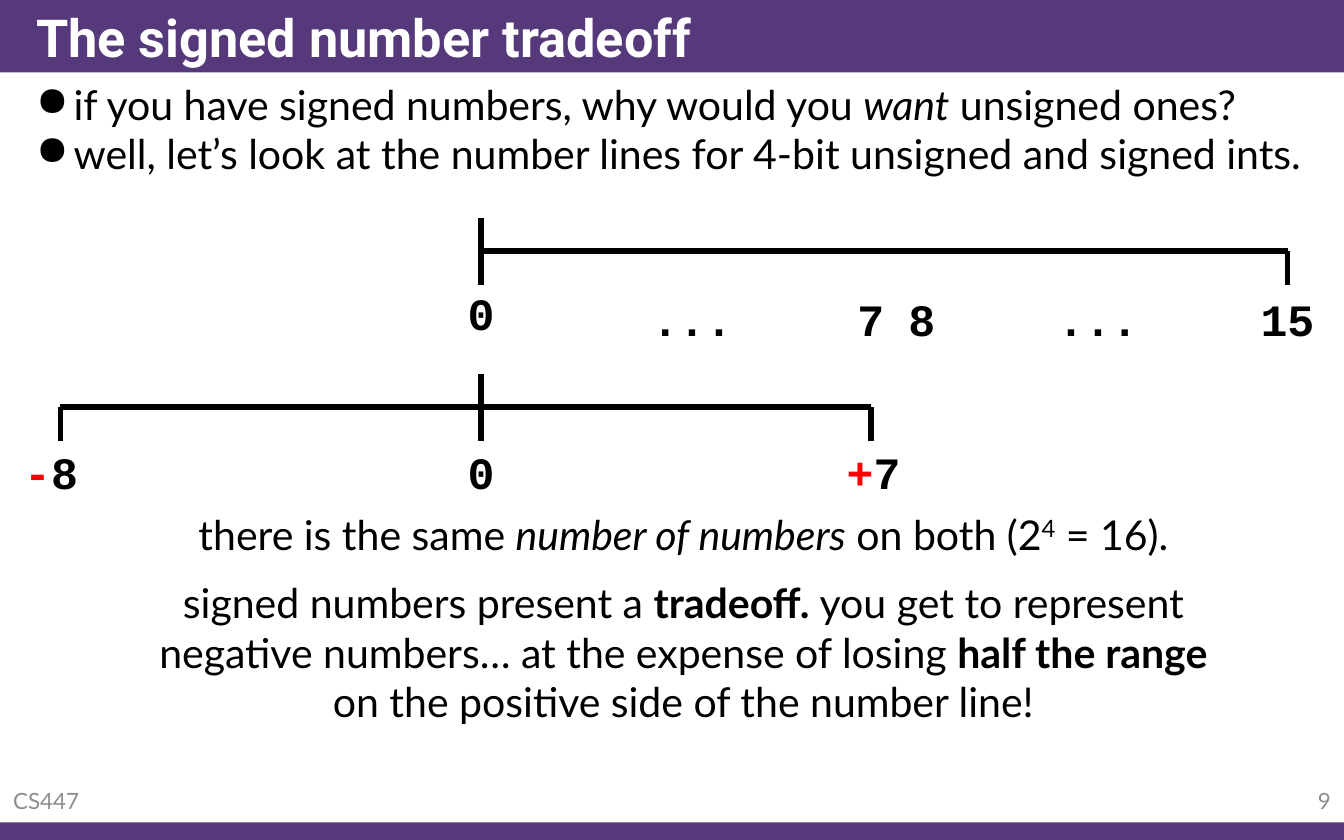
from dataclasses import dataclass

from lxml import etree
from pptx import Presentation
from pptx import util as u
from pptx.dml import color
from pptx.enum import shapes, text
from pptx.oxml import ns


@dataclass(frozen=True)
class Theme:
    purple: str = "56397B"
    black: str = "000000"
    white: str = "FFFFFF"
    gray: str = "8C8C8C"
    red: str = "FF0000"
    heading_font: str = "Roboto"
    body_font: str = "Lato"
    number_font: str = "Courier New"
    title_size: int = 28
    body_size: int = 22
    number_size: int = 24
    footer_size: int = 12
    line_width: int = 3


THEME = Theme()
TITLE = dict(name=THEME.heading_font, size=THEME.title_size, color=THEME.white, bold=True)
BODY = dict(name=THEME.body_font, size=THEME.body_size, color=THEME.black)
NUMBER = dict(name=THEME.number_font, size=THEME.number_size, color=THEME.black, bold=True)
FOOTER = dict(name=THEME.body_font, size=THEME.footer_size, color=THEME.gray)
BOLD = dict(bold=True)
ITALIC = dict(italic=True)
SUPERSCRIPT = dict(baseline=30000)
SIGN = dict(color=THEME.red)
CENTER = text.PP_ALIGN.CENTER
MIDDLE = text.MSO_ANCHOR.MIDDLE


def add_run(paragraph, words, style):
    run = paragraph.add_run()
    run.text = words
    for key, value in style.items():
        if key == "color":
            run.font.color.rgb = color.RGBColor.from_string(value)
        elif key == "size":
            run.font.size = u.Pt(value)
        elif key == "baseline":
            run.font._element.set("baseline", str(value))
        else:
            setattr(run.font, key, value)


def add_text(slide, box, paragraphs, style, align=text.PP_ALIGN.LEFT, **frame_format):
    shape = slide.shapes.add_textbox(*map(u.Inches, box))
    frame = shape.text_frame
    for key, value in {"word_wrap": True, **frame_format}.items():
        setattr(frame, key, value)
    for index, runs in enumerate(paragraphs):
        paragraph = frame.add_paragraph() if index else frame.paragraphs[0]
        paragraph.alignment = align
        for words, changes in runs:
            add_run(paragraph, words, {**style, **changes})
    return shape


def add_bar(slide, box):
    shape = slide.shapes.add_shape(shapes.MSO_SHAPE.RECTANGLE, *map(u.Inches, box))
    shape.shadow.inherit = False
    shape.fill.solid()
    shape.fill.fore_color.rgb = color.RGBColor.from_string(THEME.purple)
    shape.line.fill.background()


def add_line(slide, *ends):
    line = slide.shapes.add_connector(shapes.MSO_CONNECTOR.STRAIGHT, *map(u.Inches, ends))
    line.line.color.rgb = color.RGBColor.from_string(THEME.black)
    line.line.width = u.Pt(THEME.line_width)
    etree.SubElement(line._element.spPr, ns.qn("a:effectLst"))


def add_header(slide, box, title):
    left, top, width, height = box
    add_bar(slide, box)
    add_text(slide, (left + 0.17, top, width - 0.17, height), [[(title, {})]], TITLE,
             vertical_anchor=MIDDLE)


def add_bullets(slide, box, paragraphs):
    shape = add_text(slide, box, paragraphs, BODY)
    for paragraph in shape.text_frame.paragraphs:
        properties = paragraph._p.get_or_add_pPr()
        properties.set("marL", str(u.Inches(0.28)))
        properties.set("indent", str(-u.Inches(0.28)))
        etree.SubElement(properties, ns.qn("a:buChar")).set("char", "●")


def add_number_line(slide, box, zero, end_ticks, labels):
    left, top, width, height = box
    axis = top + height / 2
    add_line(slide, left, axis, left + width, axis)
    add_line(slide, zero, top, zero, top + height)
    for tick in end_ticks:
        add_line(slide, tick, axis, tick, top + height)
    for center, label_top, runs in labels:
        add_text(slide, (center - 0.5, label_top, 1, 0.5), [runs], NUMBER, CENTER)


def add_footer(slide, box, course, page):
    left, top, width, height = box
    add_text(slide, (left, top, 1.33, 0.33), [[(course, {})]], FOOTER, vertical_anchor=MIDDLE)
    add_text(slide, (left + width - 0.75, top, 0.75, 0.33), [[(page, {})]], FOOTER,
             text.PP_ALIGN.RIGHT, vertical_anchor=MIDDLE)
    add_bar(slide, (left, top + 0.33, width, height - 0.33))


def main():
    presentation = Presentation()
    presentation.slide_width = u.Inches(10)
    presentation.slide_height = u.Inches(6.25)
    slide = presentation.slides.add_slide(presentation.slide_layouts[6])

    add_header(slide, (0, 0, 10, 0.54), "The signed number tradeoff")
    add_bullets(slide, (0.17, 0.54, 9.83, 1), [
        [("if you have signed numbers, why would you ", {}), ("want", ITALIC),
         (" unsigned ones?", {})],
        [("well, let’s look at the number lines for 4-bit unsigned and signed ints.", {})],
    ])

    zero = 3.58
    unsigned_top, signed_top = 2.12, 3.26
    add_number_line(slide, (zero, 1.62, 6, 0.5), zero, [9.58], [
        (zero, 2.08, [("0", {})]),
        (5.15, unsigned_top, [("...", {})]),
        (6.48, unsigned_top, [("7", {})]),
        (6.86, unsigned_top, [("8", {})]),
        (8.17, unsigned_top, [("...", {})]),
        (9.58, unsigned_top, [("15", {})]),
    ])
    add_number_line(slide, (0.45, 2.78, 6.03, 0.5), zero, [0.45, 6.48], [
        (0.38, signed_top, [("-", SIGN), ("8", {})]),
        (zero, signed_top, [("0", {})]),
        (6.5, signed_top, [("+", SIGN), ("7", {})]),
    ])

    add_text(slide, (1.07, 3.74, 8.03, 0.47), [[
        ("there is the same ", {}), ("number of numbers", ITALIC), (" on both (2", {}),
        ("4", SUPERSCRIPT), (" = 16).", {}),
    ]], BODY, CENTER)
    add_text(slide, (1.07, 4.25, 8.03, 1.21), [[
        ("signed numbers present a ", {}), ("tradeoff. ", BOLD),
        ("you get to represent negative numbers… at the expense of losing ", {}),
        ("half the range ", BOLD), ("on the positive side of the number line!", {}),
    ]], BODY, CENTER)
    add_footer(slide, (0, 5.79, 10, 0.46), "CS447", "9")
    presentation.save("out.pptx")


if __name__ == "__main__":
    main()
